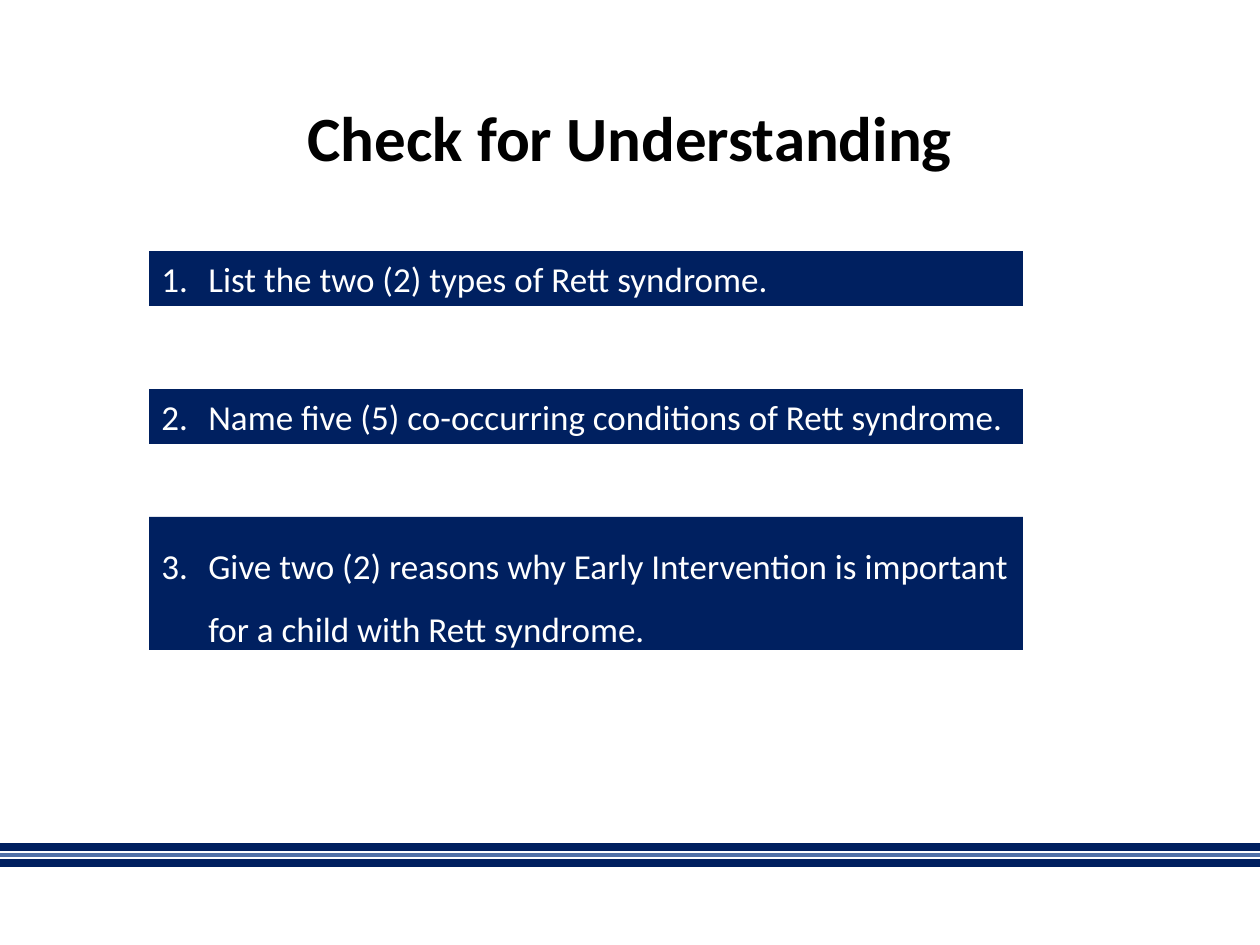
from dataclasses import dataclass

from lxml.etree import SubElement
from pptx import Presentation
from pptx.dml.color import RGBColor
from pptx.enum.shapes import MSO_CONNECTOR, MSO_SHAPE
from pptx.enum.text import MSO_ANCHOR, MSO_AUTO_SIZE, PP_ALIGN
from pptx.oxml.ns import qn
from pptx.slide import Slide
from pptx.text.text import _Paragraph
from pptx.util import Pt

PX = 914400 / 126
WIDTH, HEIGHT = 1260, 945


@dataclass(frozen=True)
class Theme:
    font: str = "Calibri"
    title_size: float = 36
    question_size: float = 20
    black: str = "000000"
    white: str = "FFFFFF"
    navy: str = "002060"
    stripe_navy: str = "001F5F"
    stripe_blue: str = "5070A7"


THEME = Theme()


@dataclass(frozen=True)
class Stripe:
    y: int
    color: str
    weight: float


@dataclass(frozen=True)
class Question:
    y: int
    height: int
    text: str
    line_spacing: float = 1.0


STRIPES = [
    Stripe(847, THEME.stripe_navy, 4.5),
    Stripe(855, THEME.stripe_blue, 2.25),
    Stripe(863, THEME.stripe_navy, 4.5),
]
QUESTION_X, QUESTION_WIDTH, NUMBER_INDENT = 149, 874, 47
QUESTIONS = [
    Question(251, 55, "List the two (2) types of Rett syndrome."),
    Question(389, 55, "Name five (5) co-occurring conditions of Rett syndrome."),
    Question(517, 133, "Give two (2) reasons why Early Intervention is important "
             "for a child with Rett syndrome.", 1.5),
]


def emu(*lengths: int) -> list[int]:
    return [round(n * PX) for n in lengths]


def write(p: _Paragraph, text: str, color: str, **font_format) -> None:
    r = p.add_run()
    r.text = text
    for name, value in {"name": THEME.font, **font_format}.items():
        setattr(r.font, name, value)
    r.font.color.rgb = RGBColor.from_string(color)


def number_paragraph(p: _Paragraph, number: int) -> None:
    """Give the paragraph a hanging automatic number."""
    indent, = emu(NUMBER_INDENT)
    pPr = p._p.get_or_add_pPr()
    pPr.set("marL", str(indent))
    pPr.set("indent", str(-indent))
    SubElement(pPr, qn("a:buAutoNum"), type="arabicPeriod", startAt=str(number))


def draw_stripe(s: Slide, stripe: Stripe) -> None:
    line = s.shapes.add_connector(
        MSO_CONNECTOR.STRAIGHT, *emu(0, stripe.y, WIDTH, stripe.y))
    line.line.color.rgb = RGBColor.from_string(stripe.color)
    line.line.width = Pt(stripe.weight)
    SubElement(line._element.spPr, qn("a:effectLst"))


def draw_title(s: Slide, text: str) -> None:
    tf = s.shapes.add_textbox(*emu(87, 50, 1086, 183)).text_frame
    tf.word_wrap = True
    tf.vertical_anchor = MSO_ANCHOR.MIDDLE
    p = tf.paragraphs[0]
    p.alignment = PP_ALIGN.CENTER
    p.line_spacing = 0.9
    write(p, text, THEME.black, size=Pt(THEME.title_size), bold=True)


def draw_question(s: Slide, number: int, question: Question) -> None:
    sp = s.shapes.add_shape(
        MSO_SHAPE.RECTANGLE,
        *emu(QUESTION_X, question.y, QUESTION_WIDTH, question.height))
    sp.shadow.inherit = False
    sp.fill.solid()
    sp.fill.fore_color.rgb = RGBColor.from_string(THEME.navy)
    sp.line.fill.background()

    frame_format = {"word_wrap": True, "vertical_anchor": MSO_ANCHOR.TOP,
                    "auto_size": MSO_AUTO_SIZE.SHAPE_TO_FIT_TEXT}
    for name, value in frame_format.items():
        setattr(sp.text_frame, name, value)

    p = sp.text_frame.paragraphs[0]
    number_paragraph(p, number)
    p.alignment = PP_ALIGN.LEFT
    p.line_spacing = question.line_spacing
    write(p, question.text, THEME.white, size=Pt(THEME.question_size))


def main() -> None:
    prs = Presentation()
    prs.slide_width, prs.slide_height = emu(WIDTH, HEIGHT)
    s = prs.slides.add_slide(prs.slide_layouts[6])
    for stripe in STRIPES:
        draw_stripe(s, stripe)
    draw_title(s, "Check for Understanding")
    for number, question in enumerate(QUESTIONS, start=1):
        draw_question(s, number, question)
    prs.save("out.pptx")


if __name__ == "__main__":
    main()
